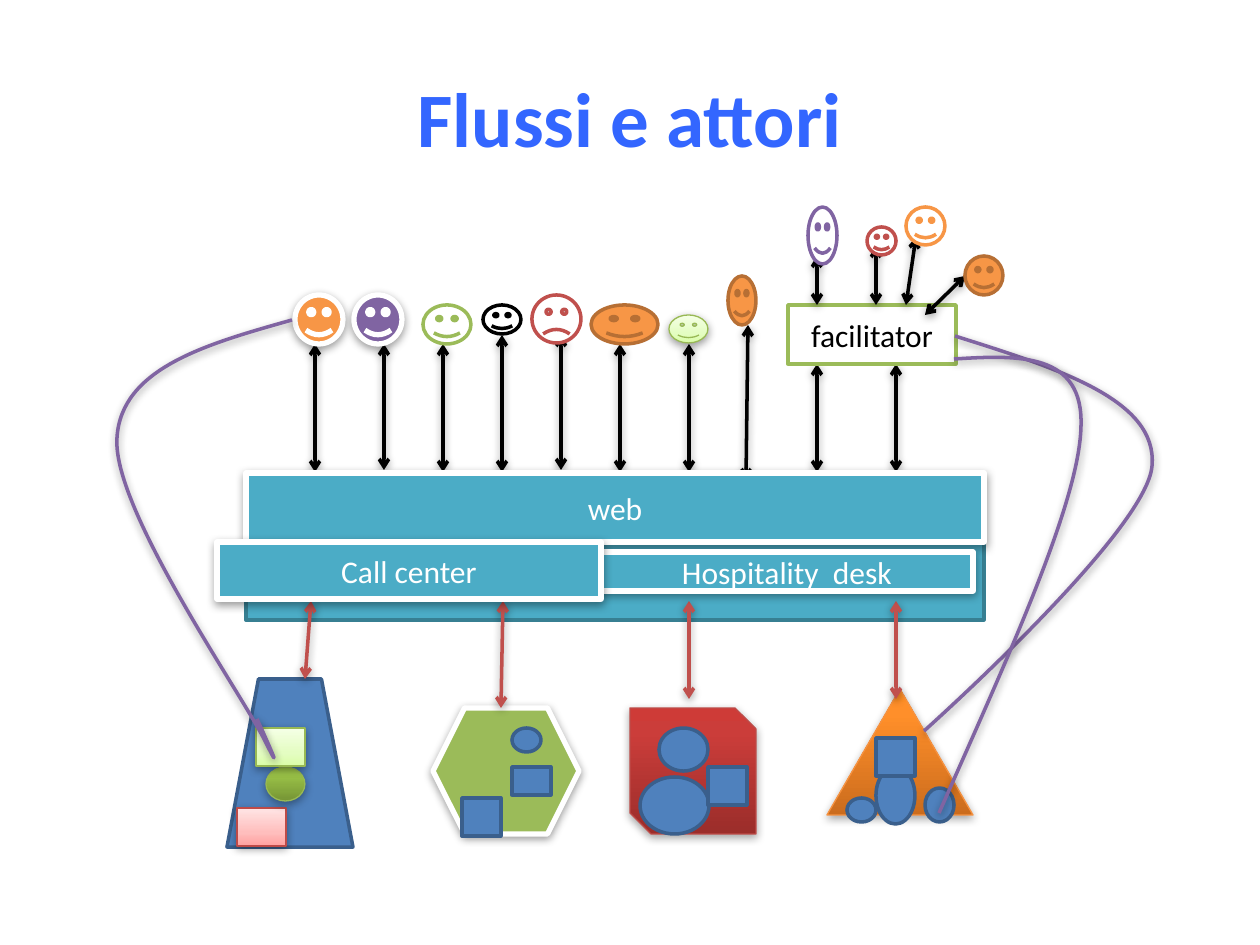
from pptx import Presentation
from pptx.dml.color import RGBColor
from pptx.enum.shapes import MSO_CONNECTOR, MSO_SHAPE
from pptx.enum.text import MSO_ANCHOR, PP_ALIGN
from pptx.oxml.ns import qn
from pptx.util import Pt
from lxml.etree import SubElement

PX = 914400 / 126  # EMU per px, 126 px to the inch

RECT, OVAL = MSO_SHAPE.RECTANGLE, MSO_SHAPE.OVAL
DISC, FACE = MSO_SHAPE.FLOWCHART_CONNECTOR, MSO_SHAPE.SMILEY_FACE
BLACK, WHITE, BLUE = "000000", "FFFFFF", "4F81BD"
GREEN, RED, PURPLE, ORANGE, TEAL = "9BBB59", "C0504D", "8064A2", "F79646", "4BACC6"

# Shadows: opacity in percent, distance in points
SOFT, DEEP = (38, 1.6), (35, 1.8)

# Gradients, from bottom to top
LIME_FADE = ((0, "DAFDA7"), (35, "E4FDC2"), (100, "F5FFE6"))
PINK_FADE = ((0, "FFA2A1"), (35, "FFBEBD"), (100, "FFE5E5"))
GREEN_FADE = ((0, "769535"), (80, "9BC348"), (100, "9CC746"))
RED_FADE = ((0, "9B2D2A"), (80, "CB3D3A"), (100, "CE3B37"))
ORANGE_FADE = ((0, "CB6C1D"), (80, "FF8F2A"), (100, "FF8F26"))

# Looks: fill, line colour, line width in points, shadow
PLAIN_BLUE = (BLUE, "3A5F8C", 2, None)
PLAIN_ORANGE = (ORANGE, "B76F34", 2, None)
LIME = (LIME_FADE, "98B954", 0.75, SOFT)
BAR = (TEAL, WHITE, 3, SOFT)


def outlined(color):
    return WHITE, color, 2, None


def raised(color):
    return color, WHITE, 3, SOFT


def emu(*lengths):
    return [round(length * PX) for length in lengths]


def rgb(color):
    return RGBColor.from_string(color)


def set_line(item, color, width):
    item.line.color.rgb = rgb(color)
    item.line.width = Pt(width)


def set_shadow(item, shadow):
    """Adds the effect list, empty when there is no shadow; call after fill and line."""
    effects = SubElement(item._element.spPr, qn("a:effectLst"))
    if shadow:
        opacity, distance = shadow
        outer = SubElement(effects, qn("a:outerShdw"), blurRad=str(Pt(5)),
                           dist=str(Pt(distance)), dir="5400000", rotWithShape="0")
        color = SubElement(outer, qn("a:srgbClr"), val=BLACK)
        SubElement(color, qn("a:alpha"), val=str(opacity * 1000))


def set_fill(shape, fill):
    if isinstance(fill, str):
        shape.fill.solid()
        shape.fill.fore_color.rgb = rgb(fill)
        return
    shape.fill.gradient()
    shape.fill.gradient_angle = 90
    stops = shape._element.spPr.find(qn("a:gradFill")).find(qn("a:gsLst"))
    stops.clear()
    for position, color in fill:
        stop = SubElement(stops, qn("a:gs"), pos=str(position * 1000))
        SubElement(stop, qn("a:srgbClr"), val=color)


def write(box, text, size, color, bold=False):
    frame = box.text_frame
    frame.word_wrap = True
    frame.vertical_anchor = MSO_ANCHOR.MIDDLE
    para = frame.paragraphs[0]
    para.alignment = PP_ALIGN.CENTER
    span = para.add_run()
    span.text = text
    span.font.name, span.font.size, span.font.bold = "Calibri", Pt(size), bold
    span.font.color.rgb = rgb(color)


def add_figure(page, kind, place, look):
    fill, line, width, shadow = look
    shape = page.shapes.add_shape(kind, *emu(*place))
    set_fill(shape, fill)
    set_line(shape, line, width)
    set_shadow(shape, shadow)
    return shape


def add_arrow(page, ends, color=BLACK):
    arrow = page.shapes.add_connector(MSO_CONNECTOR.STRAIGHT, *emu(*ends))
    set_line(arrow, color, 2)
    line = arrow._element.spPr.find(qn("a:ln"))
    for end in ("a:headEnd", "a:tailEnd"):
        SubElement(line, qn(end), type="arrow")
    set_shadow(arrow, SOFT)


def add_curve(page, start, points):
    """Draws cubic curves: every three points are two handles and an end."""
    builder = page.shapes.build_freeform(*start, scale=PX)
    builder.add_line_segments(points, close=False)
    curve = builder.convert_to_shape()
    curve.fill.background()
    set_line(curve, PURPLE, 2)
    set_shadow(curve, SOFT)
    outline = next(curve._element.iter(qn("a:path")))
    steps = outline.findall(qn("a:lnTo"))
    for first in range(0, len(steps), 3):
        bend = SubElement(outline, qn("a:cubicBezTo"))
        for step in steps[first:first + 3]:
            bend.append(step[0])
            outline.remove(step)


def add_web_users(page):
    # Arrows between the users and the web
    for x, top, bottom in ((384, 344, 470), (502, 335, 472), (561, 335, 470),
                           (689, 344, 472), (817, 364, 472), (620, 344, 472),
                           (315, 344, 472), (443, 344, 472), (896, 364, 472)):
        add_arrow(page, (x, top, x, bottom))
    add_arrow(page, (748, 325, 746, 480))
    box = add_figure(page, RECT, (788, 305, 168, 59), outlined(GREEN))
    write(box, "facilitator", 18, BLACK)
    for place, look in (((295, 295, 48, 49), raised(ORANGE)),
                        ((354, 295, 48, 49), raised(PURPLE)),
                        ((423, 305, 48, 39), outlined(GREEN)),
                        ((591, 305, 67, 39), PLAIN_ORANGE),
                        ((483, 305, 38, 29), outlined(BLACK)),
                        ((728, 276, 28, 49), PLAIN_ORANGE),
                        ((669, 315, 39, 28), LIME)):
        add_figure(page, FACE, place, look)
    sad = add_figure(page, FACE, (532, 295, 49, 48), outlined(RED))
    sad.adjustments[0] = -0.04653


def add_facilitator_users(page):
    for ends in ((817, 256, 817, 305), (876, 246, 876, 305),
                 (965, 276, 925, 315), (916, 237, 906, 305)):
        add_arrow(page, ends)
    for place, look in (((965, 256, 38, 39), PLAIN_ORANGE),
                        ((808, 207, 29, 57), outlined(PURPLE)),
                        ((906, 207, 39, 38), outlined(ORANGE)),
                        ((867, 227, 29, 28), outlined(RED))):
        add_figure(page, FACE, place, look)


def add_providers(page):
    for kind, place, look in (
            (MSO_SHAPE.TRAPEZOID, (227, 679, 126, 168), PLAIN_BLUE),
            (MSO_SHAPE.HEXAGON, (433, 708, 146, 126), raised(GREEN)),
            (MSO_SHAPE.SNIP_2_DIAG_RECTANGLE, (630, 708, 126, 126),
             (RED_FADE, "BE4B48", 0.75, DEEP)),
            (MSO_SHAPE.ISOSCELES_TRIANGLE, (827, 689, 146, 126),
             (ORANGE_FADE, "F69240", 0.75, DEEP))):
        add_figure(page, kind, place, look)
    for ends in ((503, 601, 501, 708), (689, 601, 689, 699),
                 (896, 601, 896, 699), (311, 601, 305, 679)):
        add_arrow(page, ends, RED)
    # Parts inside the providers
    add_figure(page, RECT, (237, 808, 49, 38), (PINK_FADE, "BE4B48", 0.75, SOFT))
    add_figure(page, DISC, (266, 767, 39, 34), (GREEN_FADE, "98B954", 0.75, DEEP))
    add_figure(page, RECT, (256, 728, 49, 38), LIME)
    for kind, place in ((RECT, (462, 798, 39, 38)), (OVAL, (640, 777, 69, 57)),
                        (OVAL, (876, 767, 39, 57)), (DISC, (512, 728, 29, 24)),
                        (DISC, (659, 728, 49, 43)), (RECT, (512, 767, 39, 28)),
                        (RECT, (708, 767, 39, 38)), (RECT, (876, 738, 39, 38)),
                        (DISC, (925, 788, 29, 34)), (DISC, (847, 798, 29, 24))):
        add_figure(page, kind, place, PLAIN_BLUE)


def main():
    deck = Presentation()
    deck.slide_width, deck.slide_height = emu(1260, 945)
    page = deck.slides.add_slide(deck.slide_layouts[6])

    title = page.shapes.add_textbox(*emu(63, 38, 1134, 157))
    write(title, "Flussi e attori", 44, "3366FF", bold=True)

    add_figure(page, RECT, (246, 473, 738, 147), (TEAL, "377F92", 2, None))
    add_web_users(page)
    add_facilitator_users(page)
    add_providers(page)

    # Contact channels
    for text, place in (("web", (246, 473, 738, 69)),
                        ("Hospitality  desk", (601, 552, 372, 39)),
                        ("Call center", (217, 542, 384, 57))):
        write(add_figure(page, RECT, place, BAR), text, 18, WHITE)

    # Direct flows that bypass the channels
    add_curve(page, (292, 320), ((207, 344), (121, 368), (117, 438),
                                 (112, 509), (242, 694), (265, 741),
                                 (289, 789), (257, 719), (257, 719)))
    add_curve(page, (955, 336), ((1056, 368), (1158, 399), (1152, 466),
                                 (1147, 532), (924, 731), (924, 731)))
    add_curve(page, (954, 359), ((1018, 355), (1084, 352), (1081, 427),
                                 (1079, 503), (1008, 657), (939, 813)))
    deck.save("out.pptx")


if __name__ == "__main__":
    main()
